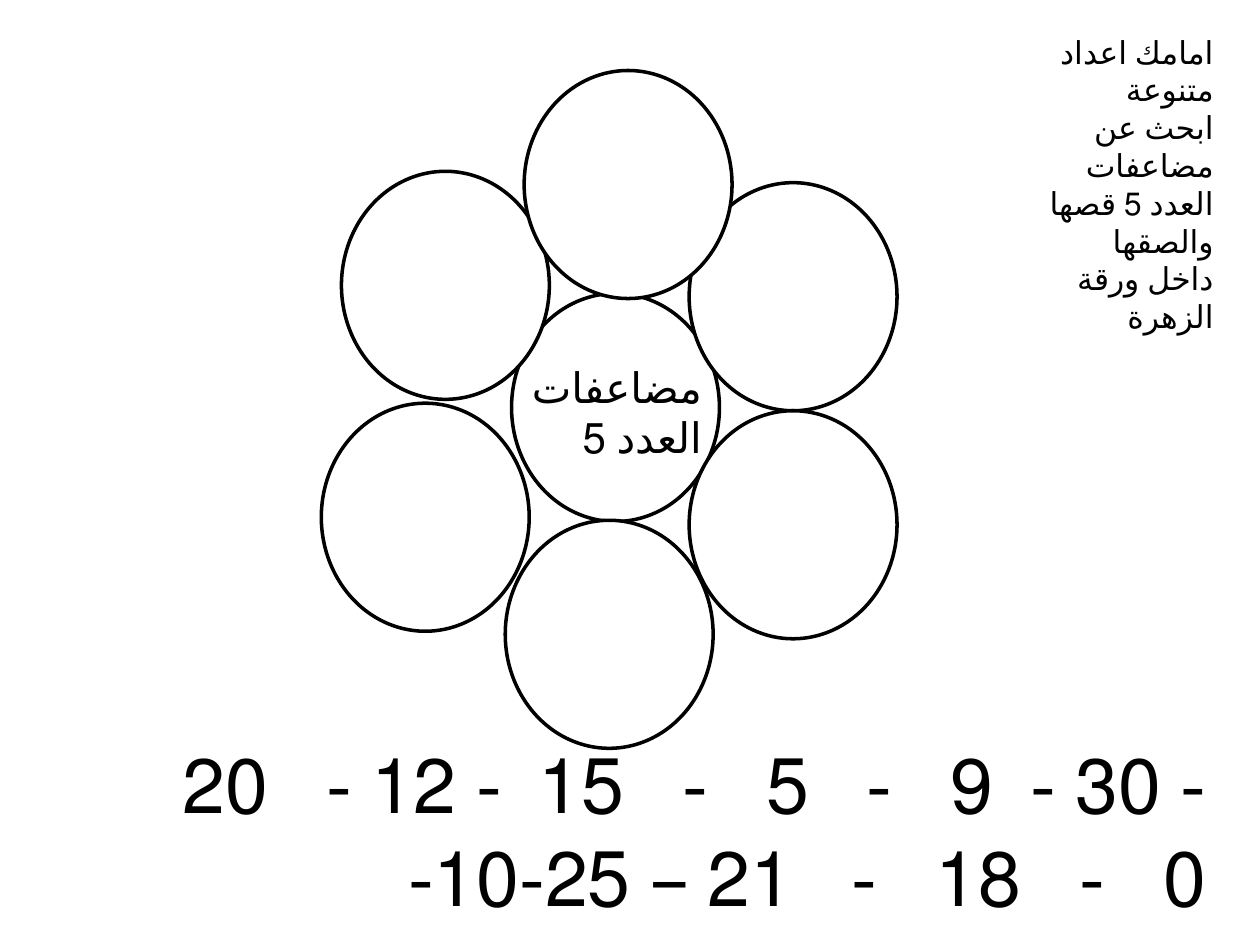
from dataclasses import dataclass

from pptx import Presentation
from pptx.dml.color import RGBColor
from pptx.enum.lang import MSO_LANGUAGE_ID
from pptx.enum.shapes import MSO_SHAPE
from pptx.enum.text import MSO_AUTO_SIZE, PP_ALIGN
from pptx.util import Pt

OVAL = MSO_SHAPE.OVAL
RIGHT = PP_ALIGN.RIGHT
GROW = MSO_AUTO_SIZE.SHAPE_TO_FIT_TEXT
ARABIC = MSO_LANGUAGE_ID.ARABIC


@dataclass(frozen=True)
class Theme:
    ink: RGBColor = RGBColor(0, 0, 0)
    paper: RGBColor = RGBColor(255, 255, 255)
    font: str = "Calibri"
    outline: float = 2
    task_size: float = 18
    title_size: float = 24
    number_size: float = 44
    space_width: float = 12.2  # one space at number_size
    gap_trim: float = 2.2


THEME = Theme()

# Flower parts, relative to the flower's box, from back to front
PETAL_SIZE = (118.8, 130.3)
PETALS = [
    (108.7, 127.4),  # centre
    (210.2, 64.1),
    (210.2, 194.4),
    (105.1, 257),
    (0, 190.1),
    (11.5, 57.6),
    (115.9, 0),
]

# Each entry: text and the width of the gap after it, in spaces
NUMBER_ROWS = [
    [("- 30 -", 2), ("9", 3), ("-", 3), ("5", 3), ("-", 3), ("15", 2),
     ("- 12 -", 3), ("20", 0)],
    [("0", 3), ("-", 3), ("18", 3), ("-", 3), ("21 – 10-25-", 0)],
]


def add_text_frame(slide, box):
    frame = slide.shapes.add_textbox(*(Pt(length) for length in box)).text_frame
    frame.word_wrap = True
    frame.auto_size = GROW
    return frame


def set_rtl(paragraph):
    paragraph.alignment = RIGHT
    paragraph._p.get_or_add_pPr().set("rtl", "1")


def style_runs(paragraph, size):
    for run in paragraph.runs:
        run.font.name = THEME.font
        run.font.size = Pt(size)
        run.font.color.rgb = THEME.ink
        run.font.language_id = ARABIC


def add_label(slide, box, wording, size):
    paragraph = add_text_frame(slide, box).paragraphs[0]
    paragraph.text = wording
    set_rtl(paragraph)
    style_runs(paragraph, size)


def add_flower(slide, box):
    left, top = box[:2]
    width, height = PETAL_SIZE
    for x, y in PETALS:
        petal = slide.shapes.add_shape(
            OVAL, Pt(left + x), Pt(top + y), Pt(width), Pt(height))
        petal.shadow.inherit = False
        petal.fill.solid()
        petal.fill.fore_color.rgb = THEME.paper
        petal.line.color.rgb = THEME.ink
        petal.line.width = Pt(THEME.outline)
    centre_x, centre_y = PETALS[0]
    add_label(slide, (left + centre_x, top + centre_y + 35.3, 115.9, 65.5),
              "مضاعفات العدد 5", THEME.title_size)


def add_numbers(slide, box):
    frame = add_text_frame(slide, box)
    for index, row in enumerate(NUMBER_ROWS):
        paragraph = frame.add_paragraph() if index else frame.paragraphs[0]
        set_rtl(paragraph)
        for wording, spaces in row:
            paragraph.add_run().text = wording
            if spaces:
                gap = paragraph.add_run()
                gap.text = " "
                # Letter spacing widens the gap, in hundredths of a point
                extra = (spaces - 1) * THEME.space_width - THEME.gap_trim
                gap._r.get_or_add_rPr().set("spc", str(round(extra * 100)))
        style_runs(paragraph, THEME.number_size)


def main():
    deck = Presentation()
    deck.slide_width, deck.slide_height = Pt(720), Pt(540)
    slide = deck.slides.add_slide(deck.slide_layouts[6])

    add_flower(slide, (183.6, 40.3, 329, 387.3))
    # Task
    add_label(slide, (592.6, 15.1, 108, 138.2),
              "امامك اعداد متنوعة ابحث عن مضاعفات العدد 5 "
              "قصها والصقها داخل ورقة الزهرة", THEME.task_size)
    # Numbers to choose from
    add_numbers(slide, (21.6, 417.6, 674.6, 220.3))

    deck.save("out.pptx")


if __name__ == "__main__":
    main()
